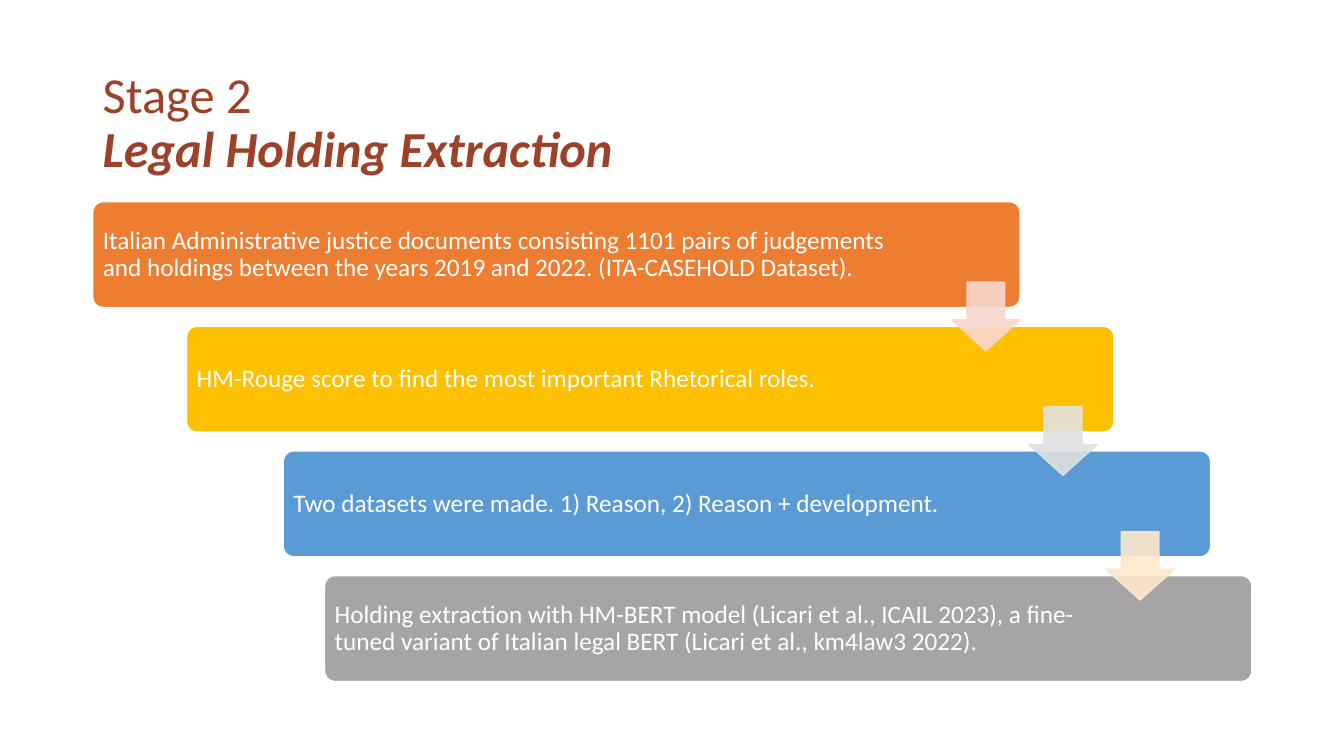
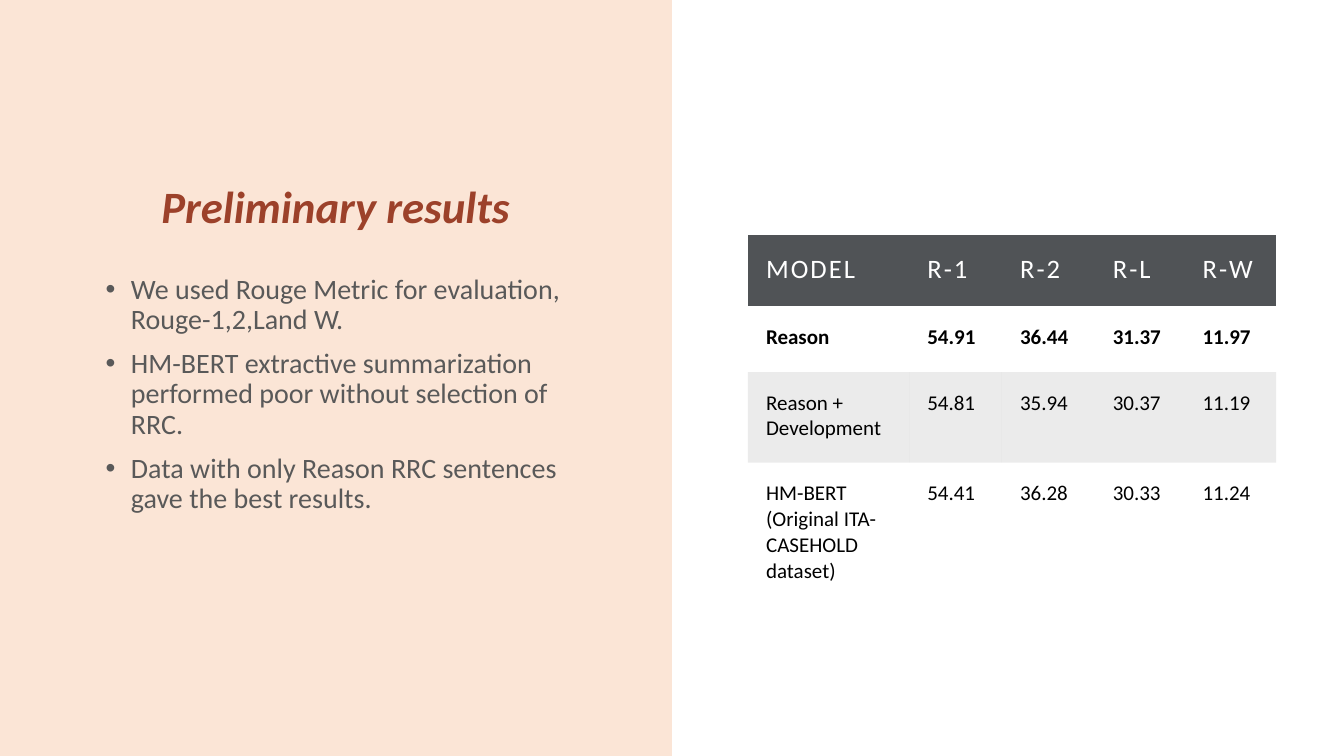
from dataclasses import dataclass

from lxml.etree import SubElement
from pptx import Presentation
from pptx.dml.color import RGBColor
from pptx.enum.shapes import MSO_SHAPE
from pptx.enum.text import MSO_ANCHOR, PP_ALIGN
from pptx.oxml.ns import qn
from pptx.util import Inches, Pt

SLIDE_WIDTH, SLIDE_HEIGHT = Inches(13.33), Inches(7.5)
NO_STYLE_NO_GRID = "{2D5ABB26-0587-4C30-8999-92F81FD0307C}"


@dataclass(frozen=True)
class Theme:
    font: str = "Calibri"
    title: str = "9C412A"
    body: str = "595959"
    white: str = "FFFFFF"
    black: str = "000000"
    panel: str = "FBE5D6"
    header: str = "505356"
    steps: tuple = ("ED7D31", "FFC000", "5B9BD5", "A5A5A5")
    arrows: tuple = ("F8D7CE", "E1E1E1", "FFE8CC")
    stage_title_size: int = 36
    results_title_size: int = 32
    body_size: int = 20
    step_size: int = 18
    header_size: int = 19
    cell_size: int = 15
    line_spacing: float = 0.9


THEME = Theme()

# Left edge in percent of the slide width, and wording, from top to bottom
STEPS = (
    (6.9, "Italian Administrative justice documents consisting 1101 pairs of judgements "
          "and holdings between the years 2019 and 2022. (ITA-CASEHOLD Dataset)."),
    (13.88, "HM-Rouge score to find the most important Rhetorical roles."),
    (21.08, "Two datasets were made. 1) Reason, 2) Reason + development."),
    (24.15, "Holding extraction with HM-BERT model (Licari et al., ICAIL 2023), a fine-tuned "
            "variant of Italian legal BERT (Licari et al., km4law3 2022)."),
)
STEP_TOP, STEP_PITCH = 26.67, 16.49
ARROW_LEFT, ARROW_TOP, ARROW_SHIFT = 70.8, 37.33, 5.74

FINDINGS = (
    "We used Rouge Metric for evaluation, Rouge-1,2,Land W.",
    "HM-BERT extractive summarization performed poor without selection of RRC.",
    "Data with only Reason RRC sentences gave the best results.",
)
SCORES = (
    ("MODEL", "R-1", "R-2", "R-L", "R-W"),
    ("Reason", "54.91", "36.44", "31.37", "11.97"),
    ("Reason + Development", "54.81", "35.94", "30.37", "11.19"),
    ("HM-BERT (Original ITA-CASEHOLD dataset)", "54.41", "36.28", "30.33", "11.24"),
)
SCORE_COLUMNS = (12, 6.9, 6.9, 6.68, 6.83)
SCORE_ROWS = (9.47, 8.67, 12, 18)


def across(percent):
    return round(SLIDE_WIDTH * percent / 100)


def down(percent):
    return round(SLIDE_HEIGHT * percent / 100)


def area(left, top, width, height):
    """Turn shares of the slide, in percent, into a position and size."""
    return across(left), down(top), across(width), down(height)


def color(code):
    return RGBColor.from_string(code)


def fade(element, opacity):
    """Give every colour inside the element an opacity in percent."""
    for tone in element.iter(qn("a:srgbClr")):
        SubElement(tone, qn("a:alpha"), val=str(opacity * 1000))


def style_paragraph(paragraph, size, code, bold=False, italic=False):
    paragraph.line_spacing = THEME.line_spacing
    for run in paragraph.runs:
        font = run.font
        font.name, font.size = THEME.font, Pt(size)
        font.color.rgb = color(code)
        font.bold, font.italic = bold, italic


def add_shape(slide, preset, box, fill, line=None, adjustments=()):
    shape = slide.shapes.add_shape(preset, *box)
    shape.shadow.inherit = False
    for index, value in enumerate(adjustments):
        shape.adjustments[index] = value
    shape.fill.solid()
    shape.fill.fore_color.rgb = color(fill)
    if line:
        shape.line.color.rgb = color(line)
        shape.line.width = Pt(1)
    else:
        shape.line.fill.background()
    return shape


def add_text_frame(slide, box, anchor):
    frame = slide.shapes.add_textbox(*box).text_frame
    frame.word_wrap = True
    frame.vertical_anchor = anchor
    return frame


def add_title(slide, box, text, size, anchor, align):
    """Add a title whose last line is bold italic."""
    paragraph = add_text_frame(slide, box, anchor).paragraphs[0]
    paragraph.text = text
    paragraph.alignment = align
    style_paragraph(paragraph, size, THEME.title)
    emphasis = paragraph.runs[-1].font
    emphasis.bold = emphasis.italic = True


def add_step(slide, left, top, text, fill):
    card = add_shape(slide, MSO_SHAPE.ROUNDED_RECTANGLE, area(left, top, 69, 14),
                     fill, THEME.white, (0.1,))
    frame = card.text_frame
    frame.text = text
    frame.word_wrap = True
    frame.vertical_anchor = MSO_ANCHOR.MIDDLE
    frame.margin_left = frame.margin_top = frame.margin_bottom = Inches(0.07)
    frame.margin_right = Inches(1.28)
    paragraph = frame.paragraphs[0]
    paragraph.alignment = PP_ALIGN.LEFT
    style_paragraph(paragraph, THEME.step_size, THEME.white)


def add_step_arrow(slide, left, top, fill):
    arrow = add_shape(slide, MSO_SHAPE.DOWN_ARROW, area(left, top, 5.1, 9.07),
                      fill, fill, (0.55, 0.45))
    fade(arrow.element, 90)


def add_bullets(slide, box, items):
    frame = add_text_frame(slide, box, MSO_ANCHOR.TOP)
    frame.text = "\n".join(items)
    for paragraph in frame.paragraphs:
        paragraph.space_before = Pt(10)
        style_paragraph(paragraph, THEME.body_size, THEME.body)
        properties = paragraph._p.get_or_add_pPr()
        properties.set("marL", str(Inches(0.25)))
        properties.set("indent", str(-Inches(0.25)))
        SubElement(properties, qn("a:buFont"), typeface="Arial")
        SubElement(properties, qn("a:buChar"), char="•")


def fill_cell(cell, text, row):
    """Write a score cell: dark header, bold best row, shaded even rows."""
    is_header = row == 0
    cell.text = text
    cell.margin_left = cell.margin_right = Inches(0.18)
    cell.margin_top = cell.margin_bottom = Inches(0.18)
    paragraph = cell.text_frame.paragraphs[0]
    style_paragraph(paragraph,
                    THEME.header_size if is_header else THEME.cell_size,
                    THEME.white if is_header else THEME.black,
                    bold=row == 1)
    paragraph.line_spacing = 1.0
    if row % 2:
        cell.fill.background()
        return
    cell.fill.solid()
    cell.fill.fore_color.rgb = color(THEME.header if is_header else THEME.black)
    if is_header:
        paragraph.runs[0]._r.get_or_add_rPr().set("spc", "150")
    else:
        fade(cell._tc.get_or_add_tcPr(), 8)


def add_scores(slide, left, top):
    box = area(left, top, sum(SCORE_COLUMNS), sum(SCORE_ROWS))
    frame = slide.shapes.add_table(len(SCORES), len(SCORE_COLUMNS), *box)
    for style in frame.element.iter(qn("a:tableStyleId")):
        style.text = NO_STYLE_NO_GRID
    table = frame.table
    table.horz_banding = False
    for column, width in zip(table.columns, SCORE_COLUMNS):
        column.width = across(width)
    for row, (height, texts) in enumerate(zip(SCORE_ROWS, SCORES)):
        table.rows[row].height = down(height)
        for column, text in enumerate(texts):
            fill_cell(table.cell(row, column), text, row)


def build_stage(slide):
    add_title(slide, area(6.9, 8.13, 86.25, 16.53), "Stage 2\vLegal Holding Extraction",
              THEME.stage_title_size, MSO_ANCHOR.MIDDLE, PP_ALIGN.LEFT)
    for index, ((left, text), fill) in enumerate(zip(STEPS, THEME.steps)):
        add_step(slide, left, STEP_TOP + index * STEP_PITCH, text, fill)
    for index, fill in enumerate(THEME.arrows):
        add_step_arrow(slide, ARROW_LEFT + index * ARROW_SHIFT,
                       ARROW_TOP + index * STEP_PITCH, fill)


def build_results(slide):
    add_shape(slide, MSO_SHAPE.RECTANGLE, area(0, 0, 50, 100), THEME.panel)
    add_title(slide, area(7.13, 10, 35.7, 21.47), "Preliminary results",
              THEME.results_title_size, MSO_ANCHOR.BOTTOM, PP_ALIGN.CENTER)
    add_bullets(slide, area(7.13, 35.73, 35.7, 54.93), FINDINGS)
    add_scores(slide, 55.65, 31.07)


def main():
    deck = Presentation()
    deck.slide_width, deck.slide_height = SLIDE_WIDTH, SLIDE_HEIGHT
    blank = deck.slide_layouts[6]
    for build in (build_stage, build_results):
        build(deck.slides.add_slide(blank))
    deck.save("out.pptx")


if __name__ == "__main__":
    main()
